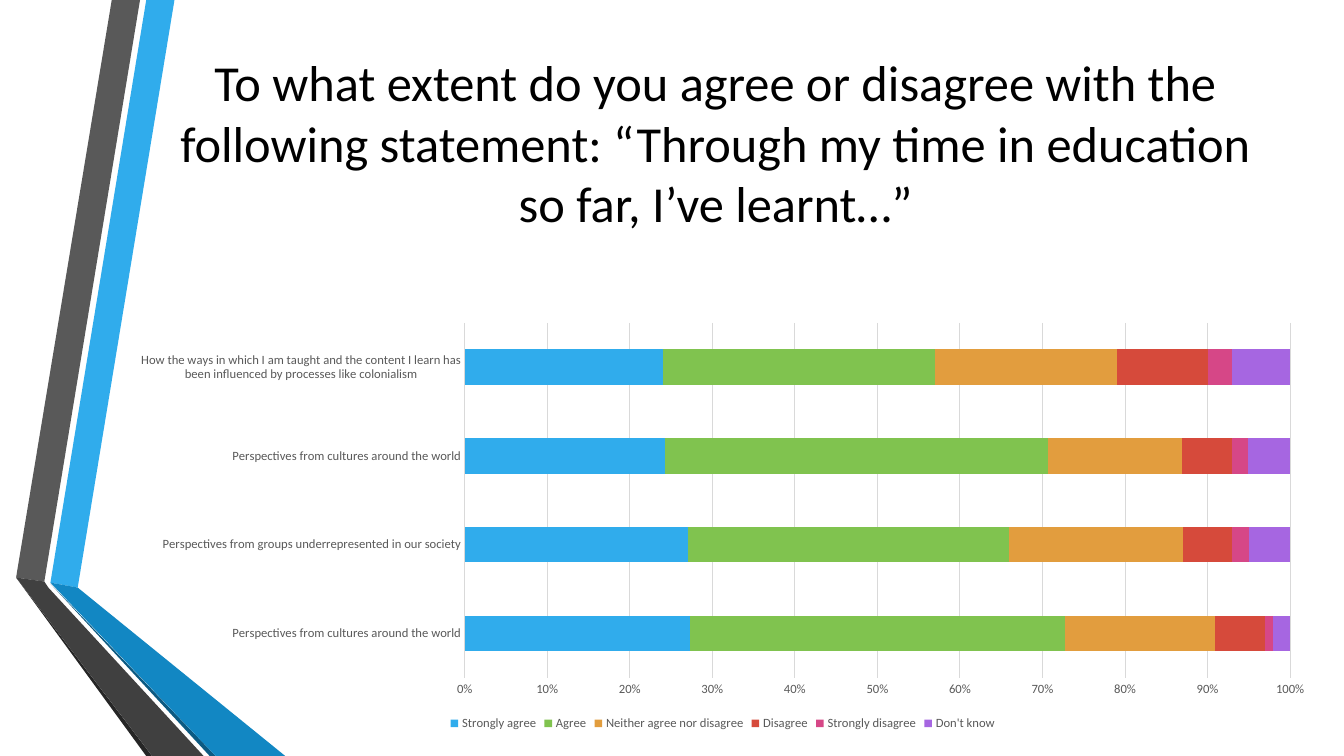
from lxml.etree import SubElement
from pptx import Presentation
from pptx.chart.data import CategoryChartData
from pptx.dml.color import RGBColor
from pptx.enum.chart import XL_CHART_TYPE, XL_LEGEND_POSITION, XL_TICK_MARK
from pptx.enum.text import MSO_ANCHOR, MSO_AUTO_SIZE, PP_ALIGN
from pptx.oxml.ns import qn
from pptx.util import Inches, Pt

COLORS = {
    "text": "000000", "label": "595959", "grid": "D9D9D9",
    "blue": "30ACEC", "blue_mid": "1287C3", "blue_dark": "0C5A82",
    "grey": "595959", "grey_mid": "404040", "grey_dark": "262626",
    "green": "80C34F", "orange": "E29D3E", "red": "D64A3B",
    "pink": "D64787", "purple": "A666E1",
}

RIBBONS = [
    ("blue", [(3.75, 77.07), (5.78, 77.73), (12.98, 0), (10.88, 0)]),
    ("grey", [(10.42, 0), (8.32, 0), (1.2, 76.4), (3.3, 76.93)]),
    ("grey_dark", [(1.2, 76.4), (10.88, 100), (11.32, 100)]),
    ("blue_dark", [(3.75, 77.2), (15.6, 100), (16.05, 100)]),
    ("blue_mid", [(3.75, 77.07), (16.05, 100), (21.22, 100), (5.78, 77.73)]),
    ("grey_mid", [(15.15, 100), (3.6, 77.73), (3.3, 76.93), (1.2, 76.4), (11.32, 100)]),
]

TITLE = ("To what extent do you agree or disagree with the following statement: "
         "“Through my time in education so far, I’ve learnt…”")

CATEGORIES = [
    "Perspectives from cultures around the world",
    "Perspectives from groups underrepresented in our society",
    "Perspectives from cultures around the world",
    "How the ways in which I am taught and the content I learn has "
    "been influenced by processes like colonialism",
]

ANSWERS = [
    ("Strongly agree", "blue", (27, 27, 24, 24)),
    ("Agree", "green", (45, 39, 46, 33)),
    ("Neither agree nor disagree", "orange", (18, 21, 16, 22)),
    ("Disagree", "red", (6, 6, 6, 11)),
    ("Strongly disagree", "pink", (1, 2, 2, 3)),
    ("Don't know", "purple", (2, 5, 5, 7)),
]


class SlideBuilder:
    font = "Calibri"

    def __init__(self, prs):
        self.width, self.height = prs.slide_width, prs.slide_height
        self.s = prs.slides.add_slide(prs.slide_layouts[5])

    def x(self, percent):
        return round(self.width * percent / 100)

    def y(self, percent):
        return round(self.height * percent / 100)

    def box(self, left, top, width, height):
        return self.x(left), self.y(top), self.x(width), self.y(height)

    def color(self, name):
        return RGBColor.from_string(COLORS[name])

    def style_font(self, font, size, color):
        font.name = self.font
        font.size = Pt(size)
        font.color.rgb = self.color(color)

    def style_line(self, line):
        line.color.rgb = self.color("grid")
        line.width = Pt(0.75)

    def ribbon(self, color, points):
        start, *rest = [(self.x(px), self.y(py)) for px, py in points]
        builder = self.s.shapes.build_freeform(*start)
        builder.add_line_segments(rest, close=True)
        sp = builder.convert_to_shape()
        sp.fill.solid()
        sp.fill.fore_color.rgb = self.color(color)
        sp.line.fill.background()
        sp.shadow.inherit = False

    def title(self, text, *area):
        sp = self.s.shapes.title
        sp.left, sp.top, sp.width, sp.height = self.box(*area)
        tf = sp.text_frame
        tf.word_wrap = True
        tf.auto_size = MSO_AUTO_SIZE.NONE
        tf.vertical_anchor = MSO_ANCHOR.MIDDLE
        tf.margin_bottom = Inches(0.65)
        tf.text = text
        p = tf.paragraphs[0]
        p.alignment = PP_ALIGN.CENTER
        self.style_font(p.font, 36, "text")

    def stacked_bars(self, categories, series, *area):
        data = CategoryChartData()
        data.categories = categories
        for name, _, values in series:
            data.add_series(name, values)
        chart = self.s.shapes.add_chart(
            XL_CHART_TYPE.BAR_STACKED_100, *self.box(*area), data).chart
        self.style_font(chart.font, 10, "text")
        chart.has_title = False
        chart.has_legend = True
        chart.legend.position = XL_LEGEND_POSITION.BOTTOM
        chart.legend.include_in_layout = False
        self.style_font(chart.legend.font, 9, "label")

        plot = chart.plots[0]
        plot.gap_width, plot.overlap = 150, 100
        plot.vary_by_categories = False
        for bars, (_, color, _) in zip(plot.series, series):
            bars.format.fill.solid()
            bars.format.fill.fore_color.rgb = self.color(color)

        for axis in (chart.category_axis, chart.value_axis):
            axis.major_tick_mark = axis.minor_tick_mark = XL_TICK_MARK.NONE
            self.style_font(axis.tick_labels.font, 9, "label")
        self.style_line(chart.category_axis.format.line)
        axis = chart.value_axis
        axis.format.line.fill.background()
        axis.minimum_scale, axis.maximum_scale, axis.major_unit = 0, 1, 0.1
        axis.has_major_gridlines = True
        self.style_line(axis.major_gridlines.format.line)
        axis.tick_labels.number_format = "0%"
        axis.tick_labels.number_format_is_linked = False


def main():
    prs = Presentation()
    prs.slide_width, prs.slide_height = Inches(13.33), Inches(7.5)
    builder = SlideBuilder(prs)
    for color, points in RIBBONS:
        builder.ribbon(color, points)
    builder.title(TITLE, 12.15, 10, 82.2, 25.6)
    builder.stacked_bars(CATEGORIES, ANSWERS, 8.7, 41.6, 90.15, 55.6)
    prs.save("out.pptx")


if __name__ == "__main__":
    main()
